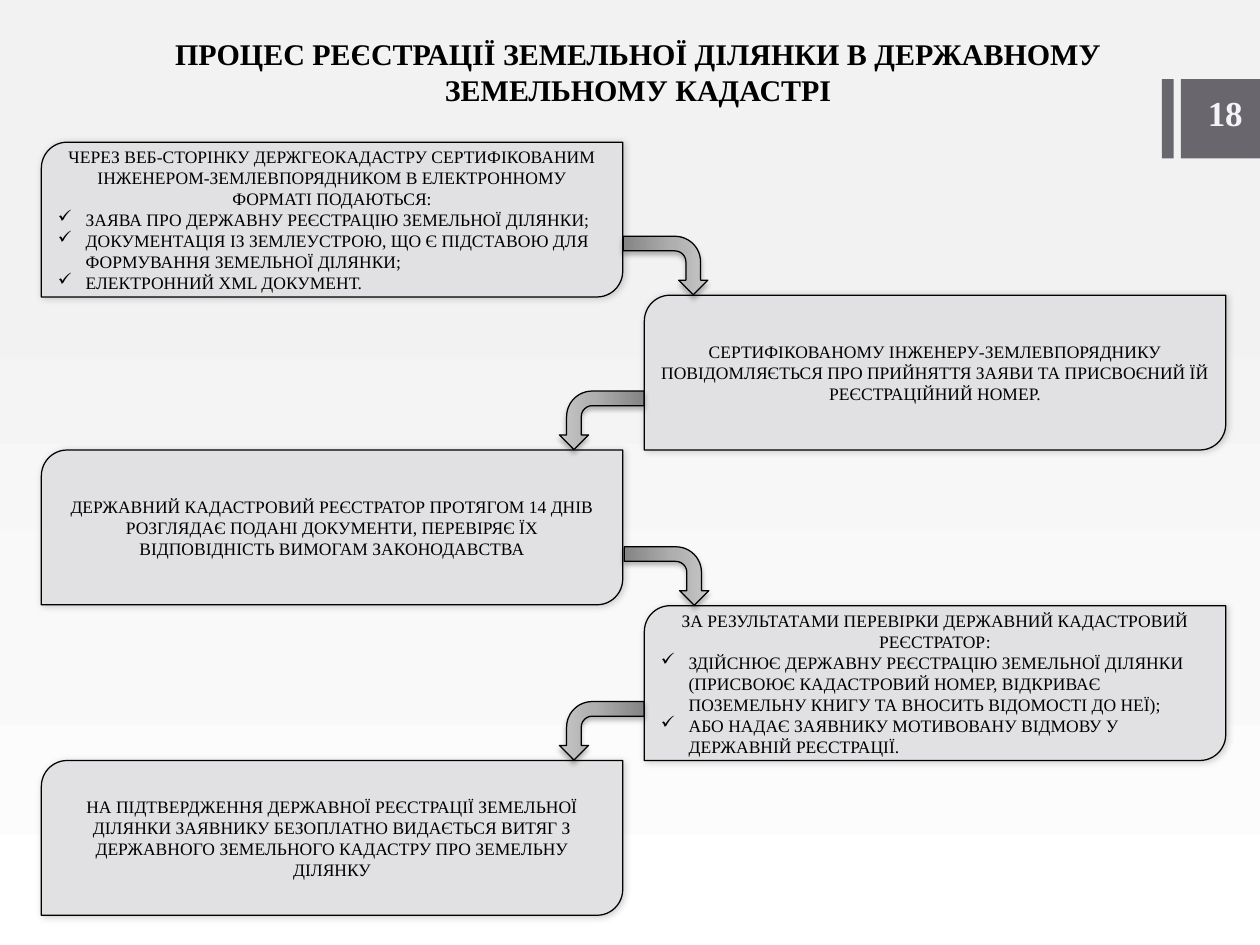
"""Build the slide on the steps of land plot registration."""
from typing import NamedTuple

from lxml import etree
from pptx import Presentation
from pptx.dml.color import RGBColor
from pptx.enum.shapes import MSO_SHAPE
from pptx.enum.text import MSO_ANCHOR, MSO_AUTO_SIZE, PP_ALIGN
from pptx.oxml.ns import qn
from pptx.util import Inches, Pt

RECT = MSO_SHAPE.RECTANGLE
CARD = MSO_SHAPE.ROUND_2_DIAG_RECTANGLE
BEND = MSO_SHAPE.BENT_ARROW
TOP, MIDDLE, BOTTOM = MSO_ANCHOR.TOP, MSO_ANCHOR.MIDDLE, MSO_ANCHOR.BOTTOM
CENTER, LEFT = PP_ALIGN.CENTER, PP_ALIGN.LEFT
NO_FIT = MSO_AUTO_SIZE.NONE

FONT = "Times New Roman"
BLACK = RGBColor(0x00, 0x00, 0x00)
SLATE = RGBColor(0x69, 0x67, 0x6D)
PALE = RGBColor(0xF4, 0xF3, 0xF6)
CLOUD = RGBColor(0xE1, 0xE0, 0xE2)


class Stop(NamedTuple):
    pos: int
    color: RGBColor


class Shadow(NamedTuple):
    alpha: int
    blur: int
    dist: int
    angle: int


class Step(NamedTuple):
    left: float
    top: float
    lead: str
    items: tuple[str, ...] = ()


class Turn(NamedTuple):
    left: float
    top: float
    right: bool


PAGE = (
    Stop(29, RGBColor(0xF2, 0xF2, 0xF2)),
    Stop(65, RGBColor(0xF9, 0xF9, 0xF9)),
    Stop(100, RGBColor(0xFF, 0xFF, 0xFF)),
)
STEEL = (
    Stop(0, RGBColor(0xC6, 0xC6, 0xC6)),
    Stop(41, RGBColor(0xAF, 0xAF, 0xAF)),
    Stop(100, RGBColor(0x84, 0x84, 0x84)),
)
SOFT = Shadow(20, 6, 1, 45)
DROP = Shadow(28, 4, 3, 90)

COL_A, COL_B = 0.46, 7.16
STEPS = (
    Step(COL_A, 1.58,
         "ЧЕРЕЗ ВЕБ-СТОРІНКУ ДЕРЖГЕОКАДАСТРУ СЕРТИФІКОВАНИМ "
         "ІНЖЕНЕРОМ-ЗЕМЛЕВПОРЯДНИКОМ В ЕЛЕКТРОННОМУ ФОРМАТІ ПОДАЮТЬСЯ:",
         ("ЗАЯВА ПРО ДЕРЖАВНУ РЕЄСТРАЦІЮ ЗЕМЕЛЬНОЇ ДІЛЯНКИ;",
          "ДОКУМЕНТАЦІЯ ІЗ ЗЕМЛЕУСТРОЮ, ЩО Є ПІДСТАВОЮ ДЛЯ "
          "ФОРМУВАННЯ ЗЕМЕЛЬНОЇ ДІЛЯНКИ;",
          "ЕЛЕКТРОННИЙ XML ДОКУМЕНТ.")),
    Step(COL_B, 3.28,
         "СЕРТИФІКОВАНОМУ ІНЖЕНЕРУ-ЗЕМЛЕВПОРЯДНИКУ ПОВІДОМЛЯЄТЬСЯ ПРО "
         "ПРИЙНЯТТЯ ЗАЯВИ ТА ПРИСВОЄНИЙ ЇЙ РЕЄСТРАЦІЙНИЙ НОМЕР."),
    Step(COL_A, 5,
         "ДЕРЖАВНИЙ КАДАСТРОВИЙ РЕЄСТРАТОР ПРОТЯГОМ 14 ДНІВ РОЗГЛЯДАЄ "
         "ПОДАНІ ДОКУМЕНТИ, ПЕРЕВІРЯЄ ЇХ ВІДПОВІДНІСТЬ ВИМОГАМ "
         "ЗАКОНОДАВСТВА"),
    Step(COL_B, 6.73,
         "ЗА РЕЗУЛЬТАТАМИ ПЕРЕВІРКИ ДЕРЖАВНИЙ КАДАСТРОВИЙ РЕЄСТРАТОР:",
         ("ЗДІЙСНЮЄ ДЕРЖАВНУ РЕЄСТРАЦІЮ ЗЕМЕЛЬНОЇ ДІЛЯНКИ (ПРИСВОЮЄ "
          "КАДАСТРОВИЙ НОМЕР, ВІДКРИВАЄ ПОЗЕМЕЛЬНУ КНИГУ ТА ВНОСИТЬ "
          "ВІДОМОСТІ ДО НЕЇ);",
          "АБО НАДАЄ ЗАЯВНИКУ МОТИВОВАНУ ВІДМОВУ У ДЕРЖАВНІЙ "
          "РЕЄСТРАЦІЇ.")),
    Step(COL_A, 8.45,
         "НА ПІДТВЕРДЖЕННЯ ДЕРЖАВНОЇ РЕЄСТРАЦІЇ ЗЕМЕЛЬНОЇ ДІЛЯНКИ "
         "ЗАЯВНИКУ БЕЗОПЛАТНО ВИДАЄТЬСЯ ВИТЯГ З ДЕРЖАВНОГО ЗЕМЕЛЬНОГО "
         "КАДАСТРУ ПРО ЗЕМЕЛЬНУ ДІЛЯНКУ"),
)
TURNS = (
    Turn(7.07, 2.48, True),
    Turn(6.36, 4.2, False),
    Turn(7.08, 5.93, True),
    Turn(6.36, 7.65, False),
)


def add(parent, tag: str, **attrs):
    """Append a drawing element with the given attributes."""
    return etree.SubElement(parent, qn(tag), {k: str(v) for k, v in attrs.items()})


def shade(fill, node, stops: tuple[Stop, ...]) -> None:
    """Give a fill a gradient that runs from top to bottom."""
    fill.gradient()
    fill.gradient_angle = 270
    ramp = next(node.iter(qn("a:gsLst")))
    for old in list(ramp):
        ramp.remove(old)
    for stop in stops:
        mark = add(ramp, "a:gs", pos=stop.pos * 1000)
        add(mark, "a:srgbClr", val=stop.color)


def cast(shape, shadow: Shadow) -> None:
    """Give a shape an outer shadow."""
    shape.shadow.inherit = False
    effects = shape.element.spPr.find(qn("a:effectLst"))
    outer = add(effects, "a:outerShdw", blurRad=Pt(shadow.blur),
                dist=Pt(shadow.dist), dir=shadow.angle * 60000,
                algn="ctr", rotWithShape=0)
    color = add(outer, "a:srgbClr", val=BLACK)
    add(color, "a:alpha", val=shadow.alpha * 1000)


def style(par, size: int, color: RGBColor, bold: bool = False) -> None:
    """Format every run of a paragraph."""
    for run in par.runs:
        font = run.font
        font.name, font.size, font.bold = FONT, Pt(size), bold
        font.color.rgb = color


def pad(frame, anchor) -> None:
    """Set the wide margins of the heading texts."""
    frame.word_wrap = True
    frame.vertical_anchor = anchor
    frame.margin_left = frame.margin_right = Inches(0.14)
    frame.margin_top = frame.margin_bottom = Inches(0.07)


def draw_title(slide, text: str) -> None:
    """Place and format the title."""
    title = slide.shapes.title
    title.left, title.top = Inches(1.49), Inches(0.08)
    title.width, title.height = Inches(11.2), Inches(1.18)
    frame = title.text_frame
    frame.text = text
    frame.auto_size = NO_FIT
    pad(frame, BOTTOM)
    frame.paragraphs[0].alignment = CENTER
    style(frame.paragraphs[0], 24, BLACK, True)


def draw_badge(slide, text: str) -> None:
    """Draw the page number on its two bars."""
    for left, width in ((12.91, 0.13), (13.12, 0.88)):
        bar = slide.shapes.add_shape(
            RECT, Inches(left), Inches(0.88), Inches(width), Inches(0.88))
        bar.shadow.inherit = False
        bar.fill.solid()
        bar.fill.fore_color.rgb = SLATE
        bar.line.fill.background()
    box = slide.shapes.add_textbox(
        Inches(13.28), Inches(0.95), Inches(1.27), Inches(0.61))
    box.text_frame.text = text
    pad(box.text_frame, TOP)
    style(box.text_frame.paragraphs[0], 28, PALE, True)


def draw_step(slide, step: Step) -> None:
    """Draw one card with its lead and ticked items."""
    card = slide.shapes.add_shape(
        CARD, Inches(step.left), Inches(step.top), Inches(6.46), Inches(1.72))
    card.fill.solid()
    card.fill.fore_color.rgb = CLOUD
    card.line.color.rgb = BLACK
    card.line.width = Pt(1)
    cast(card, SOFT)
    frame = card.text_frame
    frame.word_wrap = True
    frame.vertical_anchor = MIDDLE
    frame.text = "\n".join((step.lead, *step.items))
    for i, par in enumerate(frame.paragraphs):
        par.alignment = LEFT if i else CENTER
        style(par, 14, BLACK)
        if i:
            props = par._p.get_or_add_pPr()
            props.set("marL", str(Inches(0.31)))
            props.set("indent", str(-Inches(0.31)))
            add(props, "a:buChar", char="✓")


def draw_turn(slide, turn: Turn) -> None:
    """Draw a bent arrow that leads down to the next card."""
    arrow = slide.shapes.add_shape(
        BEND, Inches(turn.left), Inches(turn.top), Inches(0.65), Inches(0.94))
    arrow.rotation = 90 if turn.right else 270
    if not turn.right:
        arrow.element.spPr.xfrm.set("flipH", "1")
    shade(arrow.fill, arrow.element, STEEL)
    arrow.line.color.rgb = BLACK
    arrow.line.width = Pt(1)
    cast(arrow, DROP)


def main() -> None:
    """Build and save the deck."""
    deck = Presentation()
    deck.slide_width, deck.slide_height = Inches(14), Inches(10.5)
    slide = deck.slides.add_slide(deck.slide_layouts[5])
    shade(slide.background.fill, slide.element, PAGE)
    draw_title(slide, "ПРОЦЕС РЕЄСТРАЦІЇ ЗЕМЕЛЬНОЇ ДІЛЯНКИ В ДЕРЖАВНОМУ "
                      "ЗЕМЕЛЬНОМУ КАДАСТРІ")
    draw_badge(slide, "18")
    for step in STEPS:
        draw_step(slide, step)
    for turn in TURNS:
        draw_turn(slide, turn)
    deck.save("out.pptx")


if __name__ == "__main__":
    main()
